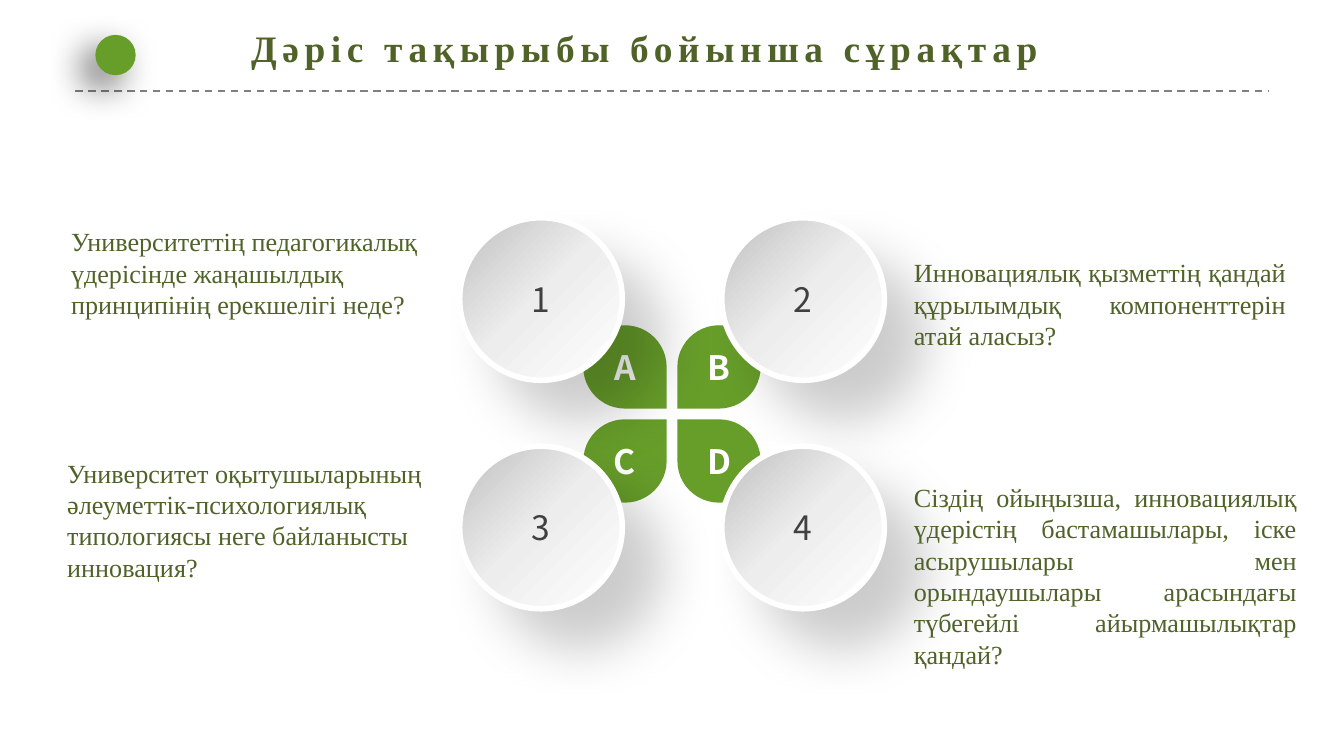
from lxml.etree import SubElement
from pptx import Presentation
from pptx.dml.color import RGBColor
from pptx.enum.dml import MSO_LINE
from pptx.enum.shapes import MSO_CONNECTOR, MSO_SHAPE
from pptx.enum.text import MSO_ANCHOR, MSO_AUTO_SIZE, PP_ALIGN
from pptx.oxml.ns import qn
from pptx.util import Inches, Pt

# Content
TITLE = "Дәріс тақырыбы бойынша сұрақтар"
# left, top, width, height, side inset, top inset, alignment, paragraphs
QUESTIONS = [
    (6.73, 1.87, 2.91, 0.78, 0.07, 0.04, PP_ALIGN.JUSTIFY,
     ["Инновациялық қызметтің қандай құрылымдық компоненттерін атай аласыз?"]),
    (0.43, 3.36, 2.91, 1.19, 0.07, 0.04, PP_ALIGN.LEFT,
     ["Университет оқытушыларының әлеуметтік-психологиялық типологиясы неге байланысты",
      "инновация?"]),
    (6.73, 3.54, 2.99, 1.49, 0.07, 0.04, PP_ALIGN.JUSTIFY,
     ["Сіздің ойыңызша, инновациялық үдерістің бастамашылары, іске асырушылары мен "
      "орындаушылары арасындағы түбегейлі айырмашылықтар қандай?"]),
    (0.43, 1.63, 2.91, 0.81, 0.1, 0.05, PP_ALIGN.LEFT,
     ["Университеттің педагогикалық үдерісінде жаңашылдық принципінің ерекшелігі неде?"]),
]
LEAVES = [("A", 90), ("B", 180), ("C", 0), ("D", 270)]  # letter, rotation
NUMBERS = ["1", "2", "3", "4"]

GREEN, DARK_GREEN, WHITE = "679E2A", "4F6228", "FFFFFF"
SERIF, SANS = "Times New Roman", "Noto Sans CJK SC"
DISC_STOPS = [(0, "C0C0C0"), (49, "EDEDED"), (100, WHITE)]
LEAF_SIZE, DISC_SIZE = 0.62, 1.21


def rgb(value):
    return RGBColor.from_string(value)


def place(left, top, width, height):
    return [Inches(v) for v in (left, top, width, height)]


def add_run(paragraph, text, size, font, color, bold=False):
    run = paragraph.add_run()
    run.text = text
    run.font.size = Pt(size)
    run.font.name = font
    run.font.bold = bold
    run.font.color.rgb = rgb(color)
    return run


def set_insets(frame, side, end):
    frame.margin_left = frame.margin_right = Inches(side)
    frame.margin_top = frame.margin_bottom = Inches(end)


def add_plain(shapes, preset, box, color):
    shape = shapes.add_shape(preset, *place(*box))
    shape.shadow.inherit = False
    shape.fill.solid()
    shape.fill.fore_color.rgb = rgb(color)
    shape.line.fill.background()
    return shape


def add_color(parent, color):
    return SubElement(parent, qn("a:srgbClr"), val=color)


def cast_shadow(shape, opacity, blur, distance, angle):
    effects = shape._element.spPr.find(qn("a:effectLst"))
    shadow = SubElement(effects, qn("a:outerShdw"), blurRad=str(Pt(blur)),
                        dist=str(Pt(distance)), dir=str(angle * 60000),
                        algn="ctr", rotWithShape="0")
    SubElement(add_color(shadow, "000000"), qn("a:alpha"), val=str(opacity * 1000))


def fill_gradient(shape, stops):
    shape.fill.gradient()
    shape.fill.gradient_angle = 315
    stop_list = shape._element.spPr.find(".//" + qn("a:gsLst"))
    for old_stop in list(stop_list):
        stop_list.remove(old_stop)
    for position, color in stops:
        add_color(SubElement(stop_list, qn("a:gs"), pos=str(position * 1000)), color)


def grid_spot(index, left, top, step_x, step_y):
    row, column = divmod(index, 2)
    return left + column * step_x, top + row * step_y


# Widescreen 16:9 slide
prs = Presentation()
prs.slide_width = Inches(10)
prs.slide_height = prs.slide_width * 9 // 16
slide = prs.slides.add_slide(prs.slide_layouts[6])

# Header: dashed rule, dot and title
rule = slide.shapes.add_connector(MSO_CONNECTOR.STRAIGHT, *place(0.56, 0.68, 9.44, 0.68))
rule.line.color.rgb = rgb("808080")
rule.line.width = Pt(1)
rule.line.dash_style = MSO_LINE.DASH
SubElement(rule._element.spPr, qn("a:effectLst"))

dot = add_plain(slide.shapes, MSO_SHAPE.OVAL, (0.71, 0.26, 0.3, 0.3), GREEN)
cast_shadow(dot, 60, 20, 10, 135)

title = slide.shapes.add_textbox(*place(1.77, 0.14, 6.35, 0.44)).text_frame
title.word_wrap = False
title.auto_size = MSO_AUTO_SIZE.SHAPE_TO_FIT_TEXT
title_run = add_run(title.paragraphs[0], TITLE, 20, SERIF, DARK_GREEN, bold=True)
title_run.font._element.set("spc", "300")

# Lettered leaves, each grouped with its letter
for i, (letter, rotation) in enumerate(LEAVES):
    left, top = grid_spot(i, 4.34, 2.42, 0.7, 0.7)
    group = slide.shapes.add_group_shape()
    leaf = add_plain(group.shapes, MSO_SHAPE.TEAR, (left, top, LEAF_SIZE, LEAF_SIZE), GREEN)
    leaf.rotation = rotation
    label = add_plain(group.shapes, MSO_SHAPE.RECTANGLE,
                      (left + 0.12, top + 0.11, 0.38, 0.4), GREEN).text_frame
    label.word_wrap = False
    label.auto_size = MSO_AUTO_SIZE.SHAPE_TO_FIT_TEXT
    label.vertical_anchor = MSO_ANCHOR.MIDDLE
    label.paragraphs[0].alignment = PP_ALIGN.CENTER
    add_run(label.paragraphs[0], letter, 18, SANS, WHITE, bold=True)

# Numbered discs
for i, number in enumerate(NUMBERS):
    left, top = grid_spot(i, 3.42, 1.62, 1.95, 1.7)
    disc = add_plain(slide.shapes, MSO_SHAPE.OVAL, (left, top, DISC_SIZE, DISC_SIZE), WHITE)
    fill_gradient(disc, DISC_STOPS)
    disc.line.color.rgb = rgb(WHITE)
    disc.line.width = Pt(3)
    cast_shadow(disc, 20, 29, 29, 45)
    frame = disc.text_frame
    set_insets(frame, 0, 0.04)
    frame.vertical_anchor = MSO_ANCHOR.MIDDLE
    frame.paragraphs[0].alignment = PP_ALIGN.CENTER
    add_run(frame.paragraphs[0], number, 18, SANS, "404040")

# Questions beside the discs
for *box, side, end, alignment, lines in QUESTIONS:
    question = slide.shapes.add_textbox(*place(*box)).text_frame
    question.word_wrap = True
    question.auto_size = MSO_AUTO_SIZE.SHAPE_TO_FIT_TEXT
    set_insets(question, side, end)
    for i, line in enumerate(lines):
        paragraph = question.add_paragraph() if i else question.paragraphs[0]
        paragraph.alignment = alignment
        add_run(paragraph, line, 14, SERIF, DARK_GREEN)

prs.save("out.pptx")
